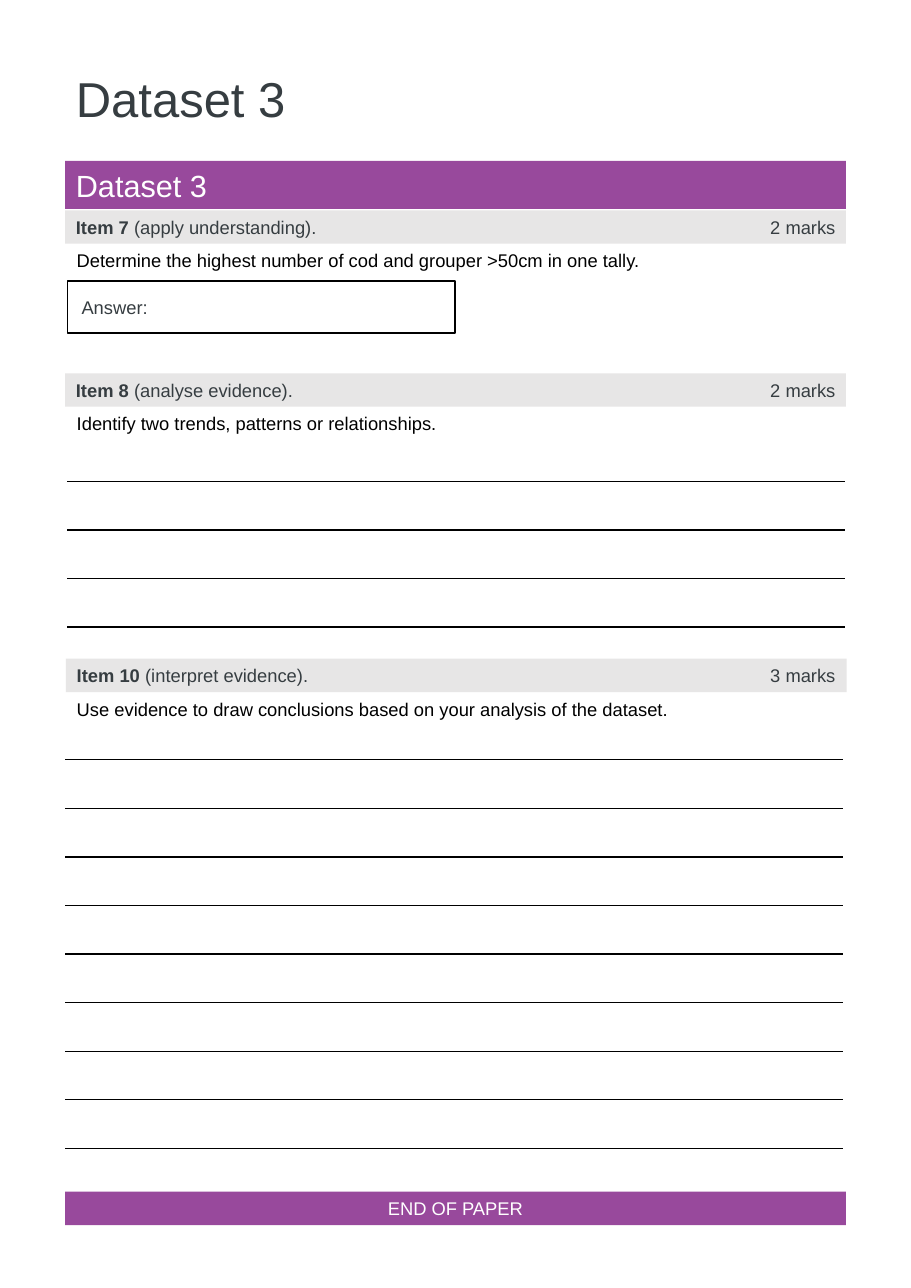
from pptx import Presentation
from pptx.dml.color import RGBColor
from pptx.enum.shapes import MSO_SHAPE as Shape
from pptx.enum.text import MSO_ANCHOR as Anchor, PP_ALIGN as Align
from pptx.oxml import parse_xml
from pptx.oxml.ns import nsdecls
from pptx.util import Cm, Pt

COLORS = {"purple": "98499C", "grey": "E7E6E6", "slate": "363D41",
          "black": "000000", "white": "FFFFFF"}
FONT = "Arial"
LEFT, WIDTH = 1.5, 18.0
BAR_HEIGHT = 0.77
RULE_WIDTH, RULE_GAP = 17.93, 1.12

# Item heading, skill, marks, prompt, left, top
ITEMS = [
    ("Item 7 ", "(apply understanding).", "2 marks",
     "Determine the highest number of cod and grouper >50cm in one tally.", 1.5, 4.85),
    ("Item 8 ", "(analyse evidence).", "2 marks",
     "Identify two trends, patterns or relationships.", 1.5, 8.61),
    ("Item 10 ", "(interpret evidence).", "3 marks",
     "Use evidence to draw conclusions based on your analysis of the dataset.", 1.52, 15.19),
]


def rgb(name):
    return RGBColor.from_string(COLORS[name])


def write(frame, text, color, size=12, align=Align.LEFT, bold_lead=""):
    frame.word_wrap = True
    paragraph = frame.paragraphs[0]
    paragraph.alignment = align
    paragraph.font.name = FONT
    paragraph.font.size = Pt(size)
    paragraph.font.color.rgb = rgb(color)
    if bold_lead:
        lead = paragraph.add_run()
        lead.text = bold_lead
        lead.font.bold = True
    paragraph.add_run().text = text


def add_label(slide, text, x, y, width, color="slate", size=12, height=BAR_HEIGHT,
              align=Align.LEFT):
    label = slide.shapes.add_textbox(Cm(x), Cm(y), Cm(width), Cm(height))
    write(label.text_frame, text, color, size, align)


def add_box(slide, x, y, width, height):
    box = slide.shapes.add_shape(Shape.RECTANGLE, Cm(x), Cm(y), Cm(width), Cm(height))
    box.shadow.inherit = False
    return box


def add_bar(slide, text, x, y, fill, color, height=BAR_HEIGHT, **style):
    bar = add_box(slide, x, y, WIDTH, height)
    bar.fill.solid()
    bar.fill.fore_color.rgb = rgb(fill)
    bar.line.fill.background()
    bar.text_frame.vertical_anchor = Anchor.MIDDLE
    write(bar.text_frame, text, color, **style)


def add_answer_box(slide, x, y, width, height):
    answer = add_box(slide, x, y, width, height)
    answer.fill.background()
    answer.line.color.rgb = rgb("black")
    answer.line.width = Pt(0.75)
    add_label(slide, "Answer:", x + 0.08, y + 0.22, 4.4)


def add_item(slide, heading, skill, marks, prompt, x, y):
    add_bar(slide, skill, x, y, "grey", "slate", bold_lead=heading)
    add_label(slide, marks, 16.46, y, 3.05, align=Align.RIGHT)
    add_label(slide, prompt, 1.52, y + 0.78, WIDTH, "black")


def set_borders(cell, ruled_sides):
    """Rule the given sides of a cell and clear the others."""
    rule = f'<a:solidFill><a:srgbClr val="{COLORS["black"]}"/></a:solidFill>'
    for index, side in enumerate("LRTB"):
        paint = rule if side in ruled_sides else "<a:noFill/>"
        border = parse_xml(f'<a:ln{side} {nsdecls("a")} w="{Pt(1)}">{paint}</a:ln{side}>')
        cell._tc.get_or_add_tcPr().insert(index, border)


def add_writing_lines(slide, x, y, rows, first_side, last_side):
    """Ruled table; the outer sides are given for its first and last rows."""
    lines = slide.shapes.add_table(rows, 1, Cm(x), Cm(y), Cm(RULE_WIDTH),
                                   Cm(RULE_GAP * rows)).table
    lines.first_row = lines.horz_banding = False
    for row in range(rows):
        cell = lines.cell(row, 0)
        cell.fill.background()
        top = first_side if row == 0 else "T"
        bottom = last_side if row == rows - 1 else "B"
        set_borders(cell, top + bottom)


def main():
    deck = Presentation()
    deck.slide_width, deck.slide_height = Cm(21), Cm(29.7)
    slide = deck.slides.add_slide(deck.slide_layouts[6])

    # Page title and section banner
    add_label(slide, "Dataset 3", LEFT, 1.45, 10.4, size=32, height=1.62)
    add_bar(slide, "Dataset 3", LEFT, 3.71, "purple", "white", height=1.11, size=20)

    # Items with their answer areas
    for item in ITEMS:
        add_item(slide, *item)
    add_answer_box(slide, 1.55, 6.48, 8.94, 1.2)
    add_writing_lines(slide, 1.55, 9.98, 4, first_side="", last_side="B")
    add_writing_lines(slide, LEFT, 17.52, 9, first_side="T", last_side="")

    # Closing banner
    add_bar(slide, "END OF PAPER", LEFT, 27.48, "purple", "white", align=Align.CENTER)

    deck.save("out.pptx")


if __name__ == "__main__":
    main()
